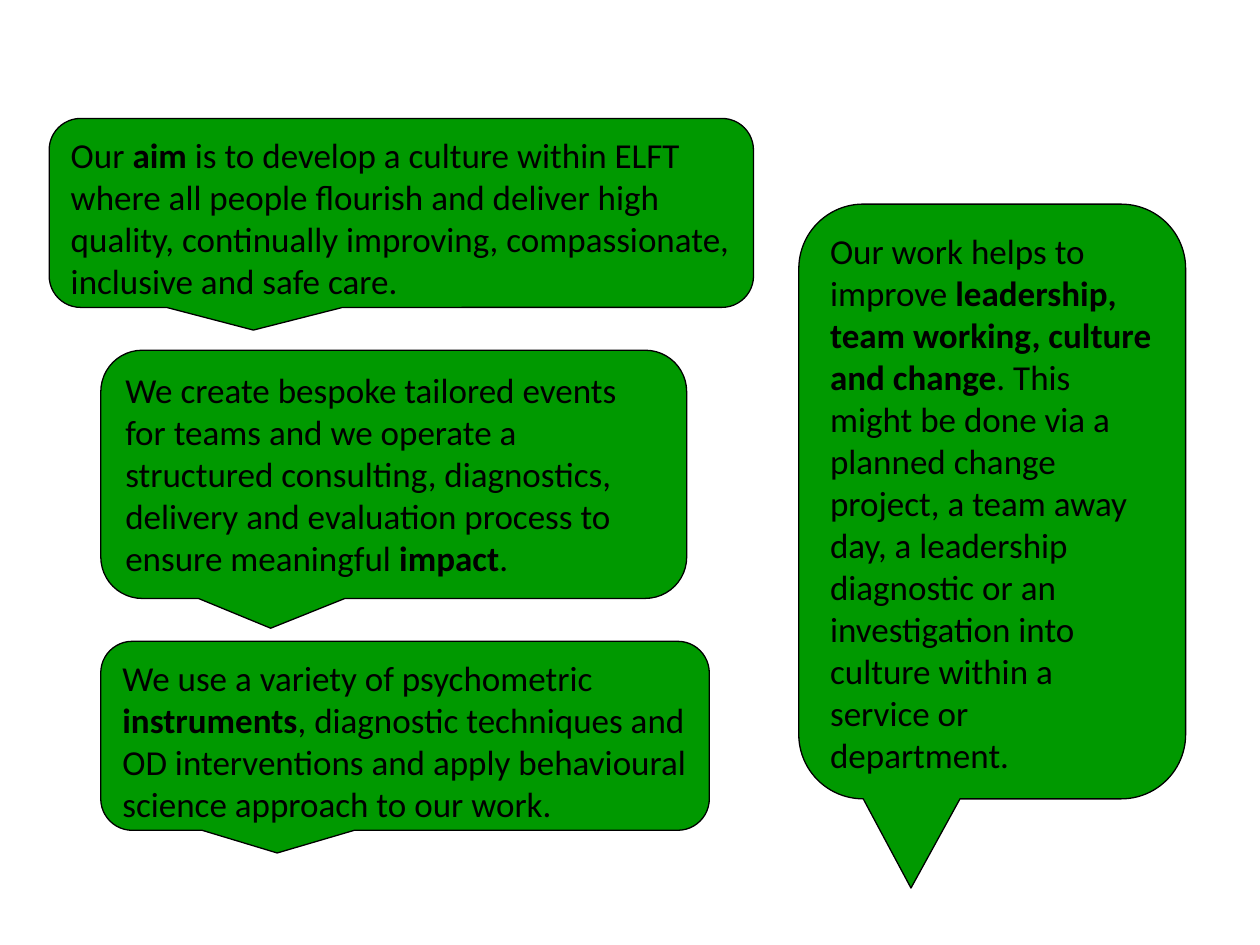
"""Build a slide of four green speech callouts about organisational development work."""
from pptx import Presentation
from pptx.dml.color import RGBColor
from pptx.enum.shapes import MSO_SHAPE as Preset
from pptx.enum.text import MSO_ANCHOR as Anchor, PP_ALIGN as Align
from pptx.util import Inches, Pt


def color(value):
    return RGBColor.from_string(value)


deck = Presentation()
deck.slide_width, deck.slide_height = Inches(10), Inches(7.5)
slide = deck.slides.add_slide(deck.slide_layouts[6])

column = row = deck.slide_width / 100
indent = 8
short_tail, long_tail = (-0.21, 0.62), (-0.21, 0.65)

statements = [
    ((3.9, 9.4, 55.9, 15), short_tail,
     ["Our ", "aim",
      " is to develop a culture within ELFT where all people flourish and deliver "
      "high quality, continually improving, compassionate, inclusive and safe care."]),
    ((63.4, 16.2, 30.7, 47.2), long_tail,
     ["Our work helps to improve ", "leadership, team working, culture and change",
      ". This might be done via a planned change project, a team away day, a leadership "
      "diagnostic or an investigation into culture within a service or department."]),
    ((indent, 27.8, 46.5, 19.7), short_tail,
     ["We create bespoke tailored events for teams and we operate a structured consulting, "
      "diagnostics, delivery and evaluation process to ensure meaningful ", "impact", "."]),
    ((indent, 50.9, 48.3, 15), short_tail,
     ["We use a variety of psychometric ", "instruments",
      ", diagnostic techniques and OD interventions and apply behavioural science "
      "approach to our work."]),
]
lettering = {"name": "Calibri", "size": Pt(20)}

for (left, top, width, height), tail, phrases in statements:
    callout = slide.shapes.add_shape(
        Preset.ROUNDED_RECTANGULAR_CALLOUT,
        round(left * column), round(top * row), round(width * column), round(height * row))
    callout.shadow.inherit = False
    callout.adjustments[0], callout.adjustments[1] = tail
    callout.fill.solid()
    callout.fill.fore_color.rgb = color("009900")
    callout.line.color.rgb = color("000000")
    callout.line.width = Pt(0.75)

    frame = callout.text_frame
    frame.word_wrap = True
    frame.vertical_anchor = Anchor.TOP
    statement = frame.paragraphs[0]
    statement.alignment = Align.LEFT
    for phrase, emphasis in zip(phrases, (False, True, False)):
        wording = statement.add_run()
        wording.text = phrase
        for attribute, value in {**lettering, "bold": emphasis}.items():
            setattr(wording.font, attribute, value)
        wording.font.color.rgb = color("000000")

deck.save("out.pptx")
